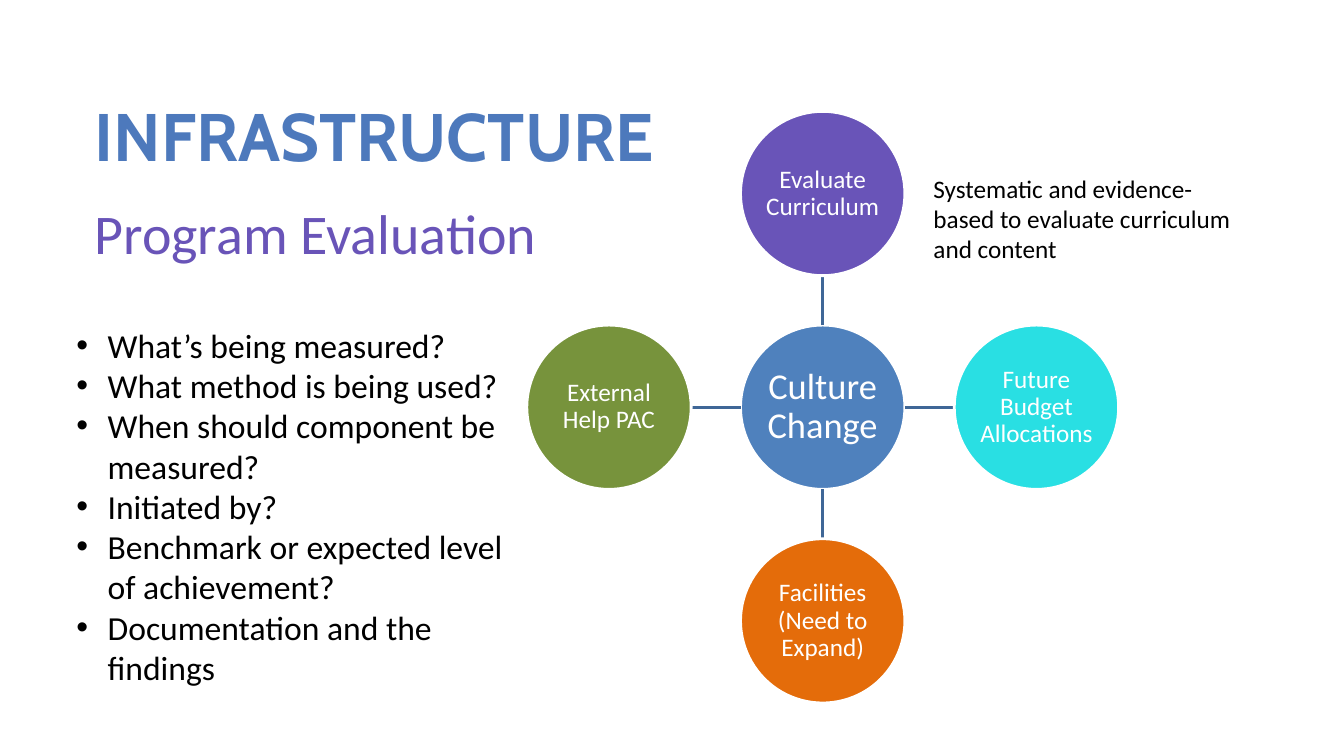
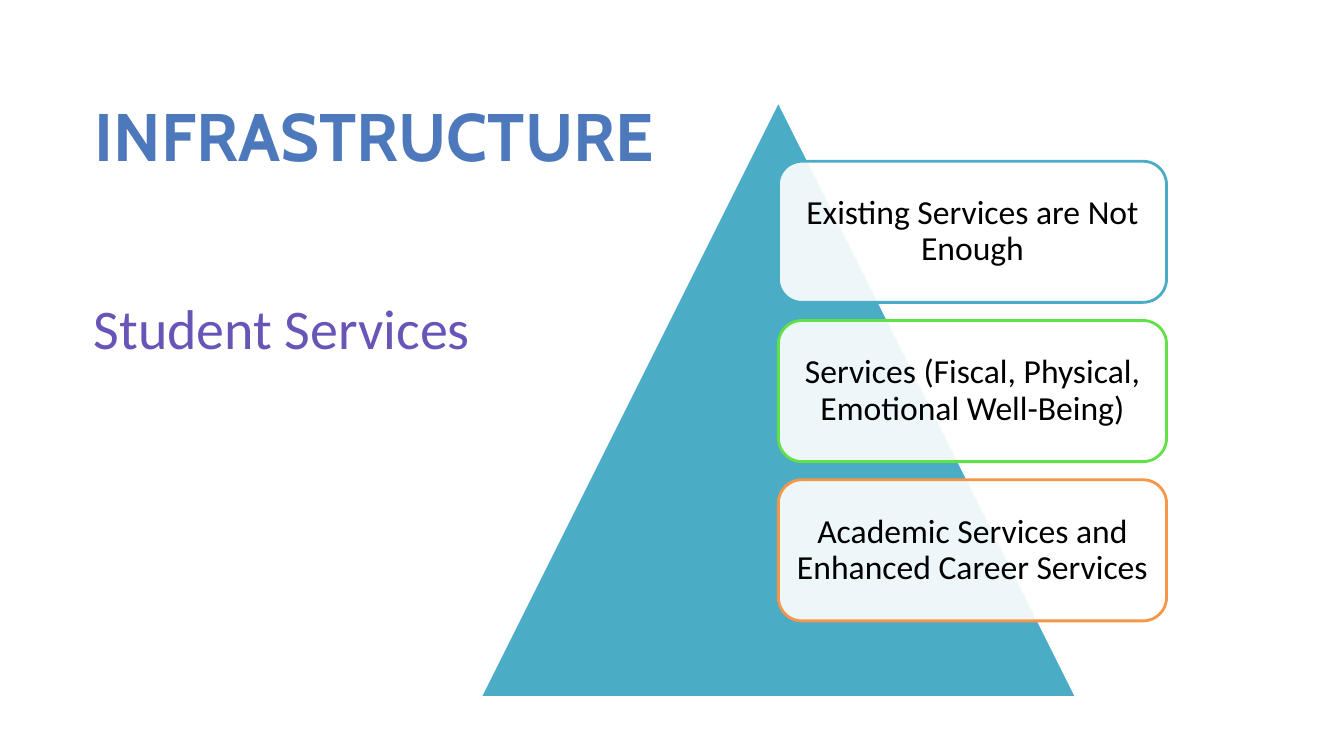
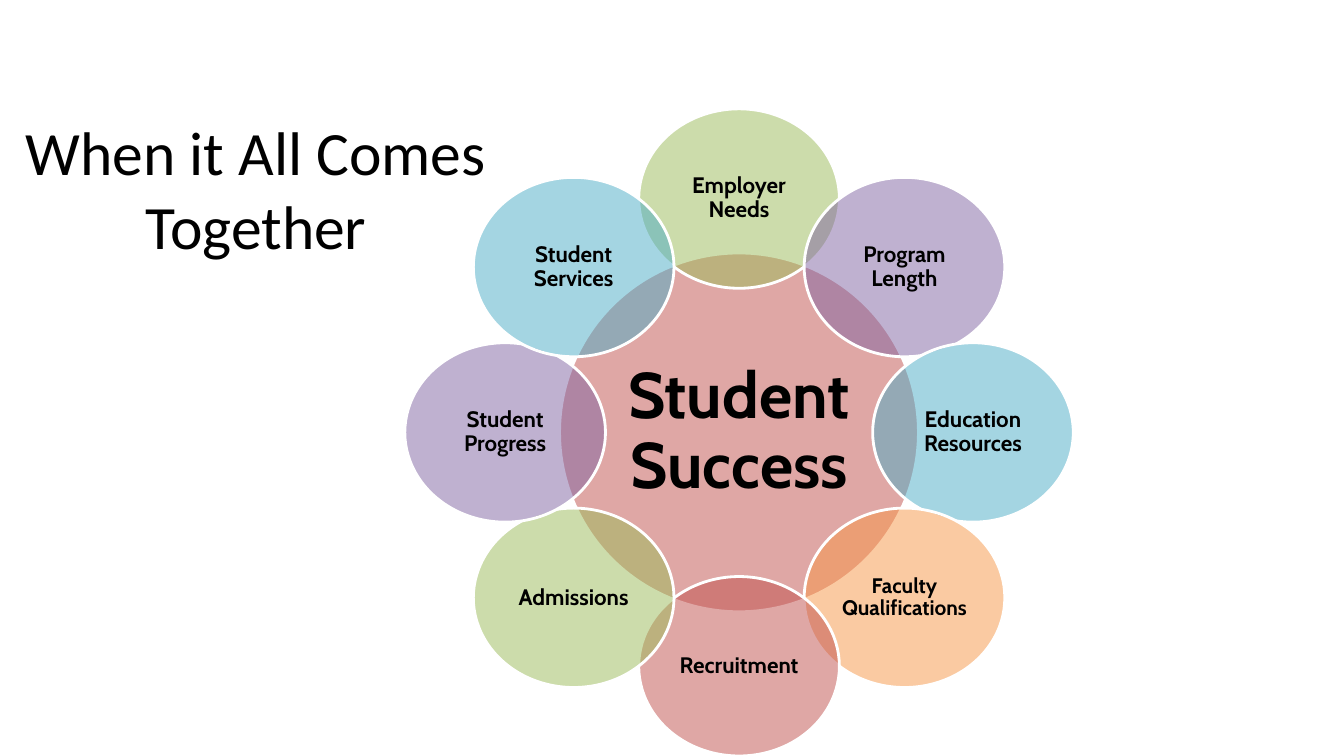
import math

from lxml import etree
from pptx import Presentation
from pptx import util as u
from pptx.dml.color import RGBColor
from pptx.enum import shapes, text
from pptx.oxml.ns import qn

PX = 9144  # EMU per px, 100 px to the inch

WHITE = RGBColor(0xFF, 0xFF, 0xFF)
BLACK = RGBColor(0x00, 0x00, 0x00)
TITLE_BLUE = RGBColor(0x4D, 0x79, 0xBC)
VIOLET = RGBColor(0x69, 0x54, 0xB8)
BLUE = RGBColor(0x4F, 0x81, 0xBD)
LINK_BLUE = RGBColor(0x3F, 0x67, 0x97)
CYAN = RGBColor(0x29, 0xDF, 0xE3)
DARK_ORANGE = RGBColor(0xE4, 0x6C, 0x0A)
OLIVE = RGBColor(0x77, 0x93, 0x3C)
AQUA = RGBColor(0x4B, 0xAC, 0xC6)
LIME = RGBColor(0x60, 0xE1, 0x46)
ORANGE = RGBColor(0xF7, 0x96, 0x46)
RED = RGBColor(0xC0, 0x50, 0x4D)
GREEN = RGBColor(0x9B, 0xBB, 0x59)
PURPLE = RGBColor(0x80, 0x64, 0xA2)

OVAL = shapes.MSO_SHAPE.OVAL
ROUNDED = shapes.MSO_SHAPE.ROUNDED_RECTANGLE
TRIANGLE = shapes.MSO_SHAPE.ISOSCELES_TRIANGLE
CENTER = text.PP_ALIGN.CENTER


class Deck:
    HEADING_FONT = "Cabin"
    BODY_FONT = "Calibri"
    LINE_WIDTH = u.Pt(2)

    def __init__(self):
        self.prs = Presentation()
        self.prs.slide_width, self.prs.slide_height = 1333 * PX, 750 * PX
        self.slide = None

    def new_slide(self):
        self.slide = self.prs.slides.add_slide(self.prs.slide_layouts[6])

    def style(self, paragraph, size, color, font=BODY_FONT, bold=False, align=None):
        paragraph.alignment = align
        for run in paragraph.runs:
            run.font.name, run.font.size = font, u.Pt(size)
            run.font.bold, run.font.color.rgb = bold, color

    def frame(self, box):
        frame = self.slide.shapes.add_textbox(*(n * PX for n in box)).text_frame
        frame.word_wrap = True
        return frame

    def label(self, box, wording, size, color=BLACK, **look):
        frame = self.frame(box)
        frame.text = wording
        self.style(frame.paragraphs[0], size, color, **look)

    def heading(self, wording):
        self.label((84, 89, 650, 91), wording, 48, TITLE_BLUE,
                   font=self.HEADING_FONT, bold=True)

    def bullets(self, box, items, size, indent):
        frame = self.frame(box)
        frame.text = "\n".join(items)
        for paragraph in frame.paragraphs:
            props = paragraph._p.get_or_add_pPr()
            props.set("marL", str(indent * PX))
            props.set("indent", str(-indent * PX))
            etree.SubElement(props, qn("a:buFont"), typeface="Arial")
            etree.SubElement(props, qn("a:buChar"), char="•")
            self.style(paragraph, size, BLACK)

    def shape(self, kind, box, fill, line=WHITE, opacity=100):
        shape = self.slide.shapes.add_shape(kind, *(round(n * PX) for n in box))
        shape.shadow.inherit = False
        shape.fill.solid()
        shape.fill.fore_color.rgb = fill
        if opacity < 100:
            color = shape._element.spPr.find(qn("a:solidFill"))[0]
            etree.SubElement(color, qn("a:alpha"), val=str(opacity * 1000))
        shape.line.color.rgb, shape.line.width = line, self.LINE_WIDTH
        return shape

    def node(self, kind, box, wording, size, color, fill, inset=2,
             font=BODY_FONT, bold=False, **look):
        """Shape with centred, tightly set text."""
        frame = self.shape(kind, box, fill, **look).text_frame
        frame.word_wrap = True
        frame.vertical_anchor = text.MSO_ANCHOR.MIDDLE
        frame.margin_left = frame.margin_right = inset * PX
        frame.margin_top = frame.margin_bottom = inset * PX
        frame.text = wording
        frame.paragraphs[0].line_spacing = 0.9
        self.style(frame.paragraphs[0], size, color, font, bold, CENTER)

    def link(self, x1, y1, x2, y2):
        line = self.slide.shapes.add_connector(
            shapes.MSO_CONNECTOR.STRAIGHT, *(round(n * PX) for n in (x1, y1, x2, y2)))
        line.line.color.rgb, line.line.width = LINK_BLUE, self.LINE_WIDTH
        etree.SubElement(line._element.spPr, qn("a:effectLst"))


def centered(x, y, width, height):
    return x - width / 2, y - height / 2, width, height


def program_evaluation(deck):
    deck.new_slide()
    deck.heading("INFRASTRUCTURE")
    deck.label((84, 192, 1057, 77), "Program Evaluation", 40, VIOLET)

    hub_x, hub_y, diameter, step = 816, 404, 163, 212
    deck.node(OVAL, centered(hub_x, hub_y, diameter, diameter),
              "Culture Change", 26, WHITE, BLUE)
    radius = diameter / 2
    for dx, dy, wording, fill in (
            (0, -1, "Evaluate Curriculum", VIOLET),
            (1, 0, "Future Budget Allocations", CYAN),
            (0, 1, "Facilities (Need to Expand)", DARK_ORANGE),
            (-1, 0, "External Help PAC", OLIVE)):
        deck.link(hub_x + dx * radius, hub_y + dy * radius,
                  hub_x + dx * (step - radius), hub_y + dy * (step - radius))
        deck.node(OVAL, centered(hub_x + dx * step, hub_y + dy * step, diameter, diameter),
                  wording, 18, WHITE, fill, inset=1)

    deck.label((916, 167, 325, 101),
               "Systematic and evidence-based to evaluate curriculum and content", 18)
    deck.bullets((66, 317, 450, 374), (
        "What’s being measured?",
        "What method is being used?",
        "When should component be measured?",
        "Initiated by?",
        "Benchmark or expected level of achievement?",
        "Documentation and the findings"), 24, indent=31)


def student_services(deck):
    deck.new_slide()
    deck.heading("INFRASTRUCTURE")
    deck.label((83, 286, 499, 77), "Student Services", 40, VIOLET)
    deck.shape(TRIANGLE, (476, 100, 592, 592), AQUA)
    for row, (wording, outline) in enumerate((
            ("Existing Services are Not Enough", AQUA),
            ("Services (Fiscal, Physical, Emotional Well-Being)", LIME),
            ("Academic Services and Enhanced Career Services", ORANGE))):
        deck.node(ROUNDED, (772, 160 + row * 158, 385, 140), wording, 24, BLACK,
                  WHITE, inset=10, line=outline, opacity=90)


def all_together(deck):
    deck.new_slide()
    deck.label((0, 108, 508, 100), "When it All Comes Together", 44, align=CENTER)

    hub_x, hub_y, ring = 733, 429, 232
    look = dict(font=deck.HEADING_FONT, bold=True, opacity=50)
    deck.node(OVAL, centered(hub_x, hub_y, 356, 356), "Student Success", 46, BLACK,
              RED, inset=6, **look)
    petals = (
        ("Employer Needs", GREEN, 16),
        ("Program Length", PURPLE, 16),
        ("Education Resources", AQUA, 16),
        ("Faculty Qualifications", ORANGE, 15),
        ("Recruitment", RED, 16),
        ("Admissions", GREEN, 16),
        ("Student Progress", PURPLE, 16),
        ("Student Services", AQUA, 16))
    for index, (wording, fill, size) in enumerate(petals):
        angle = math.tau * index / len(petals)  # clockwise from the top
        x, y = hub_x + ring * math.sin(angle), hub_y - ring * math.cos(angle)
        deck.node(OVAL, centered(x, y, 199, 178), wording, size, BLACK, fill, **look)


def main():
    deck = Deck()
    program_evaluation(deck)
    student_services(deck)
    all_together(deck)
    deck.prs.save("out.pptx")


if __name__ == "__main__":
    main()
